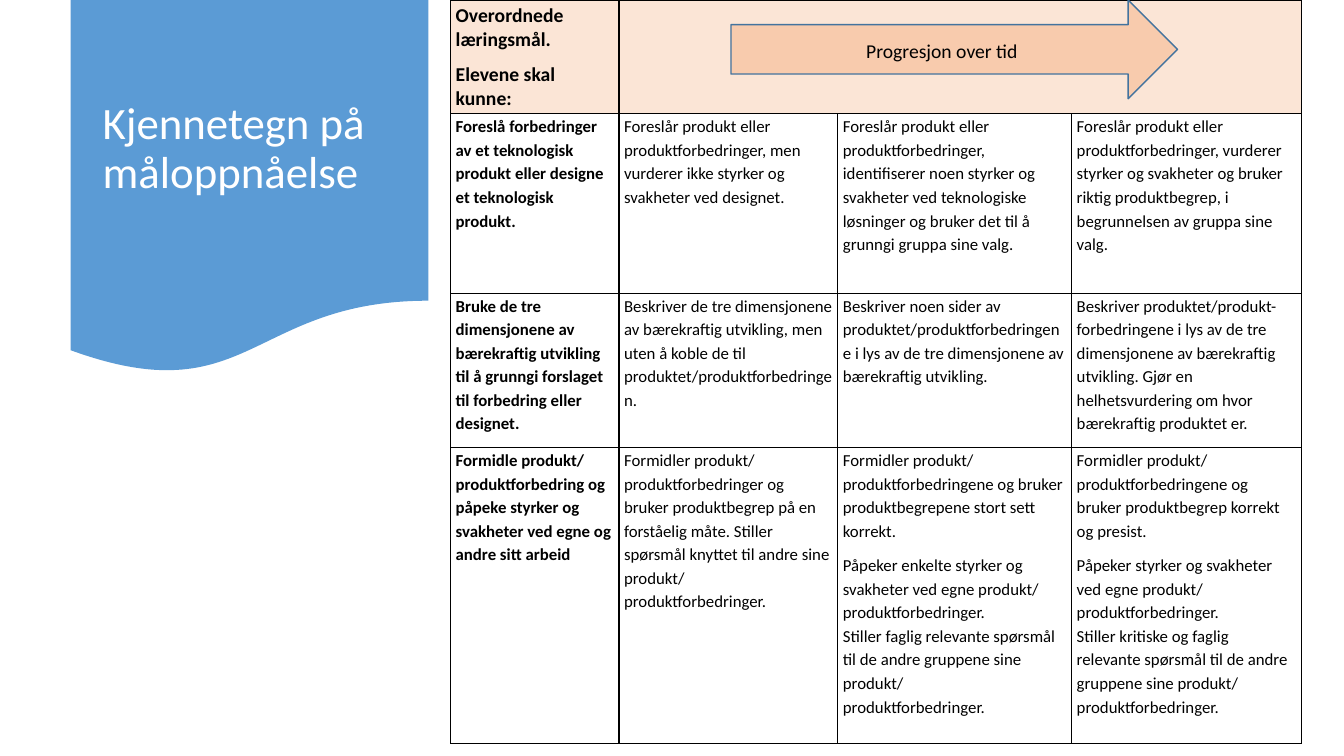
import pptx
import pptx.dml.color
import pptx.enum.shapes
import pptx.enum.text
import pptx.oxml
import pptx.oxml.ns
import pptx.util

SHAPE = pptx.enum.shapes.MSO_SHAPE
ALIGN = pptx.enum.text.PP_ALIGN
MIDDLE = pptx.enum.text.MSO_ANCHOR.MIDDLE
Pt = pptx.util.Pt

COLUMNS = [12.53, 16.28, 17.4, 17.1]
ROWS = [15.07, 23.73, 20.4, 39.2]
HEADER = ["Overordnede læringsmål.", "Elevene skal kunne:"]
GOALS = [
    [
        ["Foreslå forbedringer av et teknologisk produkt eller designe et teknologisk produkt."],
        ["Foreslår produkt eller produktforbedringer, men vurderer ikke styrker og svakheter "
         "ved designet."],
        ["Foreslår produkt eller produktforbedringer, identifiserer noen styrker og svakheter "
         "ved teknologiske løsninger og bruker det til å grunngi gruppa sine valg."],
        ["Foreslår produkt eller produktforbedringer, vurderer styrker og svakheter og bruker "
         "riktig produktbegrep, i begrunnelsen av gruppa sine valg."],
    ],
    [
        ["Bruke de tre dimensjonene av bærekraftig utvikling til å grunngi forslaget til "
         "forbedring eller designet."],
        ["Beskriver de tre dimensjonene av bærekraftig utvikling, men uten å koble de til "
         "produktet/produktforbedringen."],
        ["Beskriver noen sider av produktet/produktforbedringene i lys av de tre dimensjonene "
         "av bærekraftig utvikling."],
        ["Beskriver produktet/produkt-forbedringene i lys av de tre dimensjonene av "
         "bærekraftig utvikling. Gjør en helhetsvurdering om hvor bærekraftig produktet er."],
    ],
    [
        ["Formidle produkt/\nproduktforbedring og påpeke styrker og svakheter ved egne og "
         "andre sitt arbeid"],
        ["Formidler produkt/\nproduktforbedringer og bruker produktbegrep på en forståelig "
         "måte. Stiller spørsmål knyttet til andre sine produkt/\nproduktforbedringer."],
        ["Formidler produkt/\nproduktforbedringene og bruker produktbegrepene stort sett "
         "korrekt.",
         "Påpeker enkelte styrker og svakheter ved egne produkt/\nproduktforbedringer.\n"
         "Stiller faglig relevante spørsmål til de andre gruppene sine "
         "produkt/\nproduktforbedringer."],
        ["Formidler produkt/\nproduktforbedringene og bruker produktbegrep korrekt og presist.",
         "Påpeker styrker og svakheter ved egne produkt/\nproduktforbedringer.\n"
         "Stiller kritiske og faglig relevante spørsmål til de andre gruppene sine "
         "produkt/\nproduktforbedringer."],
    ],
]


def rgb(value):
    return pptx.dml.color.RGBColor.from_string(value)


def apply(target, values):
    for name, value in values.items():
        setattr(target, name, value)


class Deck:
    """Holds the style and current slide; lengths are percent of the slide's size."""
    font = "Calibri"
    margins = {"margin_left": Pt(3.6), "margin_right": Pt(3.6),
               "margin_top": 0, "margin_bottom": 0}

    def __init__(self):
        self.prs = pptx.Presentation()
        apply(self.prs, {"slide_width": pptx.util.Inches(13.33),
                         "slide_height": pptx.util.Inches(7.5)})
        self.slide = self.prs.slides.add_slide(self.prs.slide_layouts[6])

    def x(self, share):
        return round(self.prs.slide_width * share / 100)

    def y(self, share):
        return round(self.prs.slide_height * share / 100)

    def box(self, left, top, width, height):
        return self.x(left), self.y(top), self.x(width), self.y(height)

    def fill_text(self, tf, paragraphs, size, color="000000", bold=False, **layout):
        tf.word_wrap = True
        for i, text in enumerate(paragraphs):
            p = tf.paragraphs[0] if i == 0 else tf.add_paragraph()
            p.text = text.replace("\n", "\v")
            apply(p, layout)
            for r in p.runs:
                apply(r.font, {"name": self.font, "size": Pt(size), "bold": bold})
                r.font.color.rgb = rgb(color)
            # Line breaks take the text size too, so that line heights stay even
            for br in p._p.findall(pptx.oxml.ns.qn("a:br")):
                br.append(pptx.oxml.parse_xml(
                    f'<a:rPr {pptx.oxml.ns.nsdecls("a")} sz="{size * 100}"/>'))

    def shape(self, kind, place, fill, line=None):
        s = self.slide.shapes.add_shape(kind, *self.box(*place))
        s.shadow.inherit = False
        s.fill.solid()
        s.fill.fore_color.rgb = rgb(fill)
        if line:
            s.line.color.rgb = rgb(line)
            s.line.width = Pt(1)
        else:
            s.line.fill.background()
        return s

    def text(self, place, words, size, color, **layout):
        tf = self.slide.shapes.add_textbox(*self.box(*place)).text_frame
        tf.vertical_anchor = MIDDLE
        self.fill_text(tf, [words], size, color, **layout)

    def table(self, left, top, columns, rows):
        place = self.box(left, top, sum(columns), sum(rows))
        table = self.slide.shapes.add_table(len(rows), len(columns), *place).table
        apply(table, {"first_row": False, "horz_banding": False})
        for column, width in zip(table.columns, columns):
            column.width = self.x(width)
        for row, height in zip(table.rows, rows):
            row.height = self.y(height)
        return table

    def cell(self, cell, fill):
        """Give a cell its margins, black borders and fill."""
        apply(cell, self.margins)
        for side in "LRTB":
            cell._tc.get_or_add_tcPr().append(pptx.oxml.parse_xml(
                f'<a:ln{side} {pptx.oxml.ns.nsdecls("a")} w="12700"><a:solidFill>'
                f'<a:srgbClr val="000000"/></a:solidFill></a:ln{side}>'))
        cell.fill.solid()
        cell.fill.fore_color.rgb = rgb(fill)


def main():
    deck = Deck()
    deck.shape(SHAPE.FLOWCHART_DOCUMENT, (5.25, 0, 26.63, 49.6), "5B9BD5")
    deck.text((6.9, 2.53, 23.33, 34.53), "Kjennetegn på måloppnåelse", 32, "FFFFFF",
              line_spacing=0.9)

    table = deck.table(33.53, 0, COLUMNS, ROWS)
    for i in range(len(ROWS)):
        for j in range(len(COLUMNS)):
            deck.cell(table.cell(i, j), "FFFFFF" if i else "FBE5D6")
    table.cell(0, 1).merge(table.cell(0, 3))
    table.cell(0, 0).vertical_anchor = MIDDLE
    deck.fill_text(table.cell(0, 0).text_frame, HEADER, 14, bold=True, space_after=Pt(8))
    for i, row in enumerate(GOALS, 1):
        for j, paragraphs in enumerate(row):
            deck.fill_text(table.cell(i, j).text_frame, paragraphs, 12, bold=j == 0,
                           line_spacing=1.15, space_after=Pt(8))

    arrow = deck.shape(SHAPE.RIGHT_ARROW, (54.39, 0, 33.23, 13.07), "F8CBAD", "43739E")
    arrow.text_frame.vertical_anchor = MIDDLE
    deck.fill_text(arrow.text_frame, ["Progresjon over tid"], 14, alignment=ALIGN.CENTER,
                   line_spacing=1.07, space_after=Pt(8))
    deck.prs.save("out.pptx")


if __name__ == "__main__":
    main()
